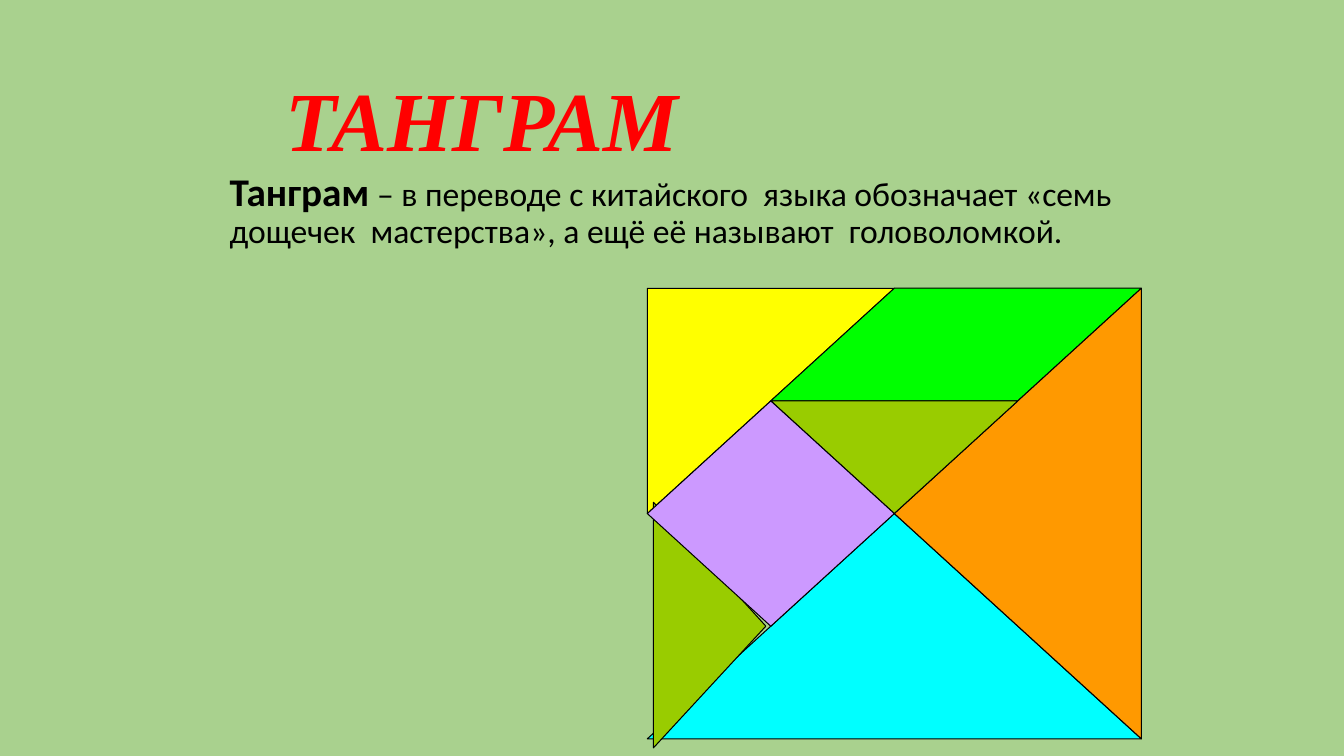
from pptx import Presentation
from pptx.dml.color import RGBColor
from pptx.enum.text import MSO_ANCHOR
from pptx.util import Inches, Pt

MIDDLE, TOP = MSO_ANCHOR.MIDDLE, MSO_ANCHOR.TOP

BLACK = RGBColor(0x00, 0x00, 0x00)
RED = RGBColor(0xFF, 0x00, 0x00)
SAGE = RGBColor(0xA9, 0xD1, 0x8E)
YELLOW = RGBColor(0xFF, 0xFF, 0x00)
GREEN = RGBColor(0x00, 0xFF, 0x00)
CYAN = RGBColor(0x00, 0xFF, 0xFF)
ORANGE = RGBColor(0xFF, 0x99, 0x00)
OLIVE = RGBColor(0x99, 0xCC, 0x00)
LILAC = RGBColor(0xCC, 0x99, 0xFF)

# Tangram pieces, back to front, as corners on a 4 by 4 grid
GRID = 4
PIECES = [
    (YELLOW, [(0, 0), (2, 0), (0, 2)]),
    (GREEN, [(2, 0), (4, 0), (3, 1), (1, 1)]),
    (CYAN, [(0, 4), (2, 2), (4, 4)]),
    (ORANGE, [(4, 0), (4, 4), (2, 2)]),
    (OLIVE, [(1, 1), (3, 1), (2, 2)]),
    (OLIVE, [(0.05, 1.9), (0.96, 3), (0.05, 4.08)]),
    (LILAC, [(0, 2), (1, 1), (2, 2), (1, 3)]),
]


def add_text(slide, box, runs, font="Calibri", color=BLACK,
             italic=False, anchor=TOP):
    """Place one paragraph; runs are (text, size, bold)."""
    frame = slide.shapes.add_textbox(*map(Inches, box)).text_frame
    frame.word_wrap = True
    frame.vertical_anchor = anchor
    para = frame.paragraphs[0]
    para.line_spacing = 0.9
    for text, size, bold in runs:
        run = para.add_run()
        run.text = text
        run.font.name = font
        run.font.size = Pt(size)
        run.font.bold = bold
        run.font.italic = italic
        run.font.color.rgb = color


def add_piece(slide, color, points):
    build = slide.shapes.build_freeform(*points[0])
    build.add_line_segments(points[1:], close=True)
    piece = build.convert_to_shape()
    piece.shadow.inherit = False
    piece.fill.solid()
    piece.fill.fore_color.rgb = color
    piece.line.color.rgb = BLACK
    piece.line.width = Pt(0.75)


def add_tangram(slide, box):
    left, top, width, height = box
    for color, cells in PIECES:
        points = [(Inches(left + col * width / GRID),
                   Inches(top + row * height / GRID)) for col, row in cells]
        add_piece(slide, color, points)


def main():
    deck = Presentation()
    deck.slide_width, deck.slide_height = Inches(13.33), Inches(7.5)
    slide = deck.slides.add_slide(deck.slide_layouts[6])
    slide.background.fill.solid()
    slide.background.fill.fore_color.rgb = SAGE

    # Title
    add_text(slide, (2.73, 0.6, 4.73, 1.26), [("ТАНГРАМ", 60, True)],
             font="Times New Roman", color=RED, italic=True, anchor=MIDDLE)

    # Definition
    add_text(slide, (2.18, 1.66, 9, 5.61), [
        ("Танграм", 28, True),
        (" – в переводе с китайского  языка обозначает «семь дощечек  "
         "мастерства», а ещё её называют  головоломкой.", 24, False),
    ])

    # Puzzle
    add_tangram(slide, (6.42, 2.86, 4.9, 4.47))
    deck.save("out.pptx")


if __name__ == "__main__":
    main()
